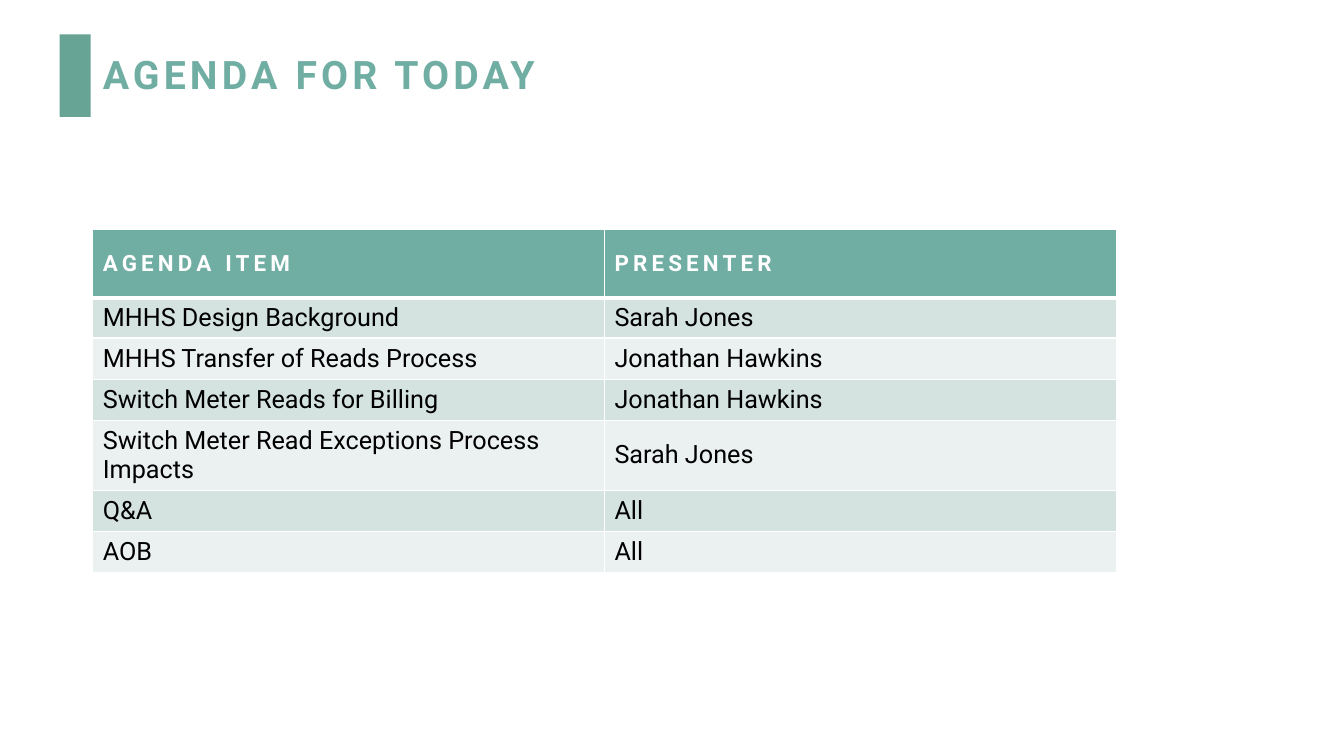
from lxml import etree
from pptx import Presentation
from pptx.dml.color import RGBColor
from pptx.enum.shapes import MSO_SHAPE
from pptx.enum.text import MSO_ANCHOR, MSO_AUTO_SIZE, PP_ALIGN
from pptx.oxml.ns import qn
from pptx.util import Inches, Pt

RECTANGLE = MSO_SHAPE.RECTANGLE
MIDDLE = MSO_ANCHOR.MIDDLE
NO_AUTOFIT = MSO_AUTO_SIZE.NONE
LEFT = PP_ALIGN.LEFT

TITLE = "AGENDA FOR TODAY"
HEADINGS = ("AGENDA ITEM", "PRESENTER")
AGENDA = [
    ("MHHS Design Background", "Sarah Jones"),
    ("MHHS Transfer of Reads Process", "Jonathan Hawkins"),
    ("Switch Meter Reads for Billing", "Jonathan Hawkins"),
    ("Switch Meter Read Exceptions Process Impacts", "Sarah Jones"),
    ("Q&A", "All"),
    ("AOB", "All"),
]
ROW_HEIGHTS = (0.68, 0.39, 0.41, 0.41, 0.69, 0.41, 0.41)
COLORS = {
    "accent": "70ADA3",
    "marker": "68A495",
    "odd_row": "D5E3E0",
    "even_row": "EBF1F0",
    "white": "FFFFFF",
    "black": "000000",
}
FONT = "Roboto"
CONTENT_LEFT, CONTENT_WIDTH = 0.92, 10.15
TABLE_TOP = 2.28


def rgb(name):
    return RGBColor.from_string(COLORS[name])


def write(frame, text, size, color, bold=False, tracking=0, line_spacing=None):
    """Fill a text frame with one formatted line; tracking is in points."""
    paragraph = frame.paragraphs[0]
    paragraph.alignment = LEFT
    if line_spacing:
        paragraph.line_spacing = line_spacing
    run = paragraph.add_run()
    run.text = text
    run.font.name = FONT
    run.font.size = Pt(size)
    run.font.bold = bold
    run.font.color.rgb = rgb(color)
    if tracking:
        run.font._element.set("spc", str(tracking * 100))


def add_borders(cell, top, bottom):
    """Draw white cell borders; top and bottom widths are in points."""
    properties = cell._tc.get_or_add_tcPr()
    for side, width in (("L", 1), ("R", 1), ("T", top), ("B", bottom)):
        line = etree.SubElement(properties, qn(f"a:ln{side}"), w=str(Pt(width)))
        fill = etree.SubElement(line, qn("a:solidFill"))
        etree.SubElement(fill, qn("a:srgbClr"), val=COLORS["white"])


def add_title(slide):
    marker = slide.shapes.add_shape(
        RECTANGLE, Inches(0.59), Inches(0.34), Inches(0.31), Inches(0.82))
    marker.shadow.inherit = False
    marker.fill.solid()
    marker.fill.fore_color.rgb = rgb("marker")
    marker.line.fill.background()

    title = slide.shapes.title
    title.left, title.top = Inches(CONTENT_LEFT), Inches(0.4)
    title.width, title.height = Inches(CONTENT_WIDTH), Inches(0.72)
    frame = title.text_frame
    frame.auto_size = NO_AUTOFIT
    frame.word_wrap = True
    frame.vertical_anchor = MIDDLE
    write(frame, TITLE, 28, "accent", bold=True, tracking=3, line_spacing=0.9)


def add_agenda(slide):
    rows = [HEADINGS, *AGENDA]
    table = slide.shapes.add_table(
        len(rows), len(HEADINGS), Inches(CONTENT_LEFT), Inches(TABLE_TOP),
        Inches(CONTENT_WIDTH), Inches(sum(ROW_HEIGHTS))).table
    for row, height in zip(table.rows, ROW_HEIGHTS):
        row.height = Inches(height)

    for row_number, row in enumerate(rows):
        is_header = row_number == 0
        if is_header:
            fill = "accent"
            style = dict(size=16, color="white", bold=True, tracking=3)
        else:
            fill = "odd_row" if row_number % 2 else "even_row"
            style = dict(size=18, color="black")
        for column, text in enumerate(row):
            cell = table.cell(row_number, column)
            cell.vertical_anchor = MIDDLE
            add_borders(cell, top=3 if row_number == 1 else 1,
                        bottom=3 if is_header else 1)
            cell.fill.solid()
            cell.fill.fore_color.rgb = rgb(fill)
            write(cell.text_frame, text, **style)


def main():
    deck = Presentation()
    deck.slide_width, deck.slide_height = Inches(13.33), Inches(7.5)
    slide = deck.slides.add_slide(deck.slide_layouts[5])
    add_title(slide)
    add_agenda(slide)
    deck.save("out.pptx")


if __name__ == "__main__":
    main()
